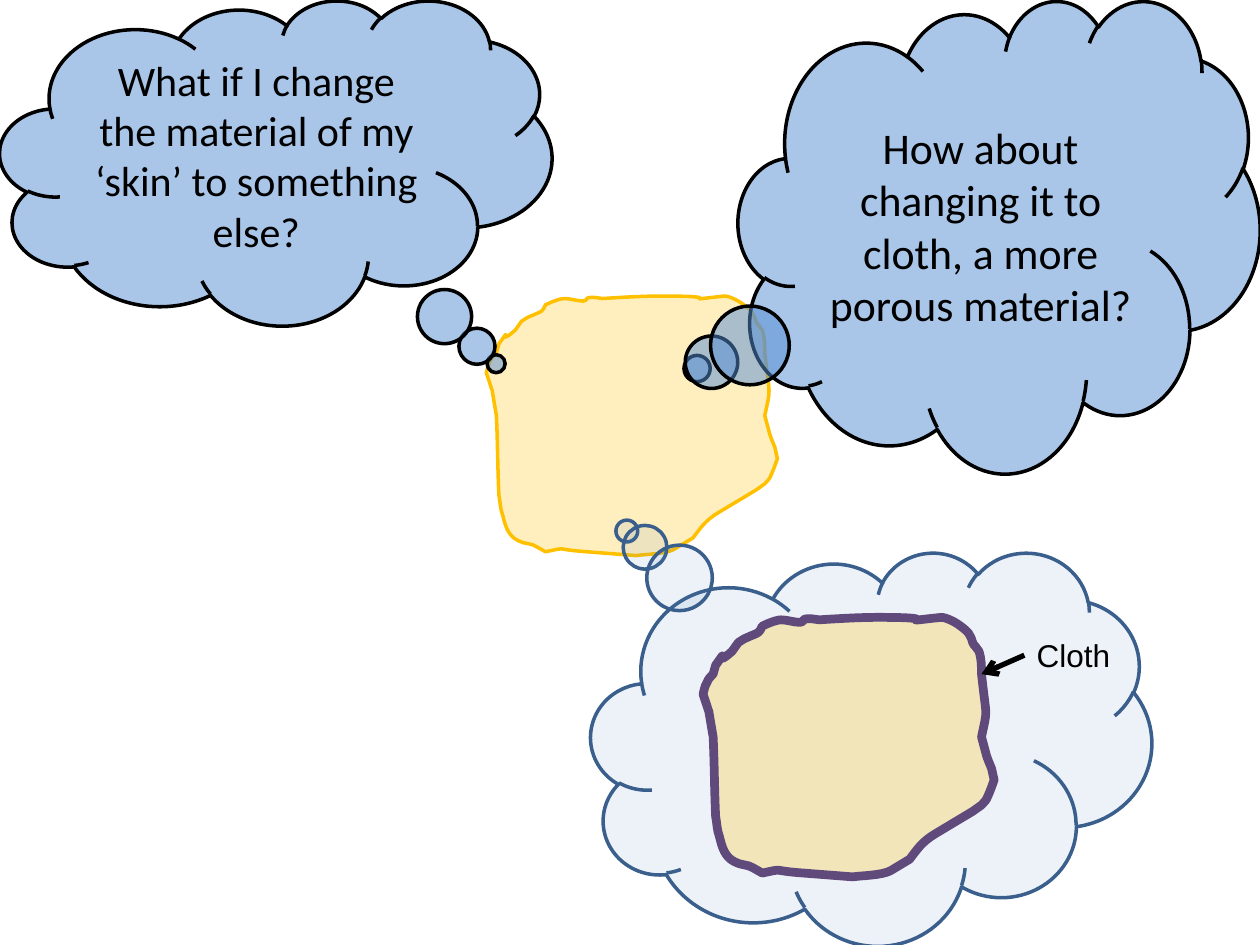
from dataclasses import dataclass

from lxml.etree import SubElement
from pptx import Presentation
from pptx.dml.color import RGBColor
from pptx.enum.shapes import MSO_CONNECTOR, MSO_SHAPE
from pptx.enum.text import MSO_ANCHOR, MSO_AUTO_SIZE, PP_ALIGN
from pptx.oxml.ns import qn
from pptx.shapes.autoshape import Shape
from pptx.shapes.shapetree import _BaseGroupShapes as Shapes
from pptx.text.text import TextFrame
from pptx.util import Inches, Pt

COLORS = {
    "ink": "000000",
    "thought": "558ED5",
    "result": "4F81BD",
    "result_edge": "3A5F8C",
    "skin": "FFC000",
    "cloth": "604A7B",
}


@dataclass(frozen=True)
class Look:
    fill: str
    opacity: int
    edge: str
    width: float


@dataclass(frozen=True)
class Thought:
    box: tuple[float, float, float, float]
    pointer: tuple[float, float]
    look: Look
    text: str = ""
    size: int = 24


@dataclass(frozen=True)
class Skin:
    shift: tuple[float, float]
    look: Look


SKIN_START = (4.63, 2.39)
SKIN_OUTLINE = [
    (4.58, 2.39, 4.53, 2.37, 4.48, 2.37),
    (4.43, 2.37, 4.33, 2.42, 4.33, 2.42),
    (4.32, 2.44, 4.31, 2.47, 4.28, 2.48),
    (4.26, 2.5, 4.23, 2.49, 4.21, 2.51),
    (4.18, 2.52, 4.16, 2.54, 4.14, 2.55),
    (4.12, 2.57, 4.11, 2.6, 4.09, 2.62),
    (3.92, 2.77, 4.09, 2.55, 3.96, 2.73),
    (3.95, 2.75, 3.95, 2.78, 3.94, 2.8),
    (3.92, 2.82, 3.9, 2.84, 3.89, 2.87),
    (3.87, 2.9, 3.87, 2.93, 3.86, 2.96),
    (3.87, 2.99, 3.88, 3.02, 3.89, 3.05),
    (3.89, 3.07, 3.91, 3.09, 3.91, 3.12),
    (3.92, 3.18, 3.93, 3.24, 3.94, 3.3),
    (3.95, 3.51, 3.95, 3.72, 3.96, 3.93),
    (3.97, 3.98, 3.97, 4.04, 3.99, 4.09),
    (4.01, 4.17, 4.03, 4.25, 4.11, 4.29),
    (4.16, 4.32, 4.22, 4.31, 4.26, 4.34),
    (4.33, 4.38),
    (4.52, 4.34, 4.38, 4.36, 4.66, 4.38),
    (4.79, 4.39, 4.92, 4.4, 5.05, 4.41),
    (5.1, 4.4, 5.28, 4.4, 5.35, 4.36),
    (5.4, 4.33, 5.5, 4.27, 5.5, 4.27),
    (5.56, 4.19, 5.6, 4.13, 5.7, 4.07),
    (5.85, 3.98),
    (6, 3.89),
    (6.07, 3.84),
    (6.09, 3.82, 6.11, 3.8, 6.12, 3.77),
    (6.14, 3.73, 6.17, 3.64, 6.17, 3.64),
    (6.16, 3.61, 6.16, 3.58, 6.15, 3.55),
    (6.13, 3.5, 6.11, 3.46, 6.1, 3.41),
    (6.07, 3.3),
    (6.12, 3.06, 6.11, 3.17, 6.07, 2.8),
    (6.07, 2.74, 6.07, 2.68, 6.05, 2.62),
    (6.04, 2.59, 6.01, 2.58, 6, 2.55),
    (5.99, 2.53, 5.99, 2.5, 5.97, 2.48),
    (5.95, 2.45, 5.87, 2.39, 5.82, 2.37),
    (5.8, 2.36, 5.77, 2.35, 5.75, 2.35),
    (5.29, 2.4, 5.86, 2.35, 5.25, 2.35),
    (5.1, 2.35, 4.94, 2.36, 4.78, 2.37),
    (4.61, 2.34, 4.68, 2.39, 4.63, 2.39),
]

THOUGHT_LOOK = Look("thought", 50, "ink", 2)
QUESTION = Thought((0, 0, 4.38, 2.58), (0.399, 0.619), THOUGHT_LOOK,
                   "What if I change the material of my ‘skin’ to something else?")
IDEA = Thought((5.86, 0, 4.14, 3.75), (-0.579, 0.28), THOUGHT_LOOK,
               "How about changing it to cloth, a more porous material?", 25)
RESULT = Thought((4.69, 4.38, 4.45, 3.12), (-0.436, -0.553),
                 Look("result", 10, "result_edge", 2))
PLAIN_SKIN = Skin((0, 0), Look("skin", 25, "skin", 2))
CLOTH_SKIN = Skin((1.72, 2.55), Look("skin", 25, "cloth", 5))


def color(name: str) -> RGBColor:
    return RGBColor.from_string(COLORS[name])


def apply_look(shape: Shape, look: Look) -> None:
    shape.shadow.inherit = False
    shape.fill.solid()
    shape.fill.fore_color.rgb = color(look.fill)
    tint = shape.fill._xPr.find(f"{qn('a:solidFill')}/{qn('a:srgbClr')}")
    SubElement(tint, qn("a:alpha"), val=str(look.opacity * 1000))
    shape.line.color.rgb = color(look.edge)
    shape.line.width = Pt(look.width)


def write(frame: TextFrame, text: str, font: str, size: int, align: PP_ALIGN) -> None:
    frame.word_wrap = True
    paragraph = frame.paragraphs[0]
    paragraph.text = text
    paragraph.alignment = align
    paragraph.font.name = font
    paragraph.font.size = Pt(size)
    paragraph.font.color.rgb = color("ink")


def bend_edges(shape: Shape, shift: tuple[float, float]) -> None:
    edges = list(shape._element.spPr.iter(qn("a:lnTo")))
    for edge, piece in zip(edges, SKIN_OUTLINE):
        if len(piece) == 2:
            continue
        edge.tag = qn("a:cubicBezTo")
        for index in (0, 1):
            x, y = piece[2 * index:2 * index + 2]
            control = SubElement(edge, qn("a:pt"),
                                 x=str(Inches(x + shift[0]) - shape.left),
                                 y=str(Inches(y + shift[1]) - shape.top))
            edge.insert(index, control)


def draw_skin(shapes: Shapes, skin: Skin) -> None:
    dx, dy = skin.shift
    corners = [SKIN_START, *(piece[-2:] for piece in SKIN_OUTLINE)]
    first, *rest = [(Inches(x + dx), Inches(y + dy)) for x, y in corners]
    builder = shapes.build_freeform(*first)
    builder.add_line_segments(rest, close=True)
    outline = builder.convert_to_shape()
    bend_edges(outline, skin.shift)
    apply_look(outline, skin.look)


def draw_thought(shapes: Shapes, thought: Thought) -> None:
    cloud = shapes.add_shape(MSO_SHAPE.CLOUD_CALLOUT, *map(Inches, thought.box))
    cloud.adjustments[0], cloud.adjustments[1] = thought.pointer
    apply_look(cloud, thought.look)
    if thought.text:
        cloud.text_frame.vertical_anchor = MSO_ANCHOR.MIDDLE
        write(cloud.text_frame, thought.text, "Calibri", thought.size, PP_ALIGN.CENTER)


def draw_cloth_label(shapes: Shapes) -> None:
    label = shapes.add_textbox(Inches(8.13), Inches(5), Inches(0.86), Inches(0.4))
    write(label.text_frame, "Cloth", "Arial", 18, PP_ALIGN.LEFT)
    label.text_frame.auto_size = MSO_AUTO_SIZE.SHAPE_TO_FIT_TEXT
    arrow = shapes.add_connector(MSO_CONNECTOR.STRAIGHT, Inches(8.13), Inches(5.2),
                                 Inches(7.79), Inches(5.35))
    arrow.line.color.rgb = color("ink")
    arrow.line.width = Pt(3)
    SubElement(arrow.line._get_or_add_ln(), qn("a:tailEnd"), type="arrow")
    SubElement(arrow._element.spPr, qn("a:effectLst"))


def main() -> None:
    deck = Presentation()
    deck.slide_width, deck.slide_height = Inches(10), Inches(7.5)
    shapes = deck.slides.add_slide(deck.slide_layouts[6]).shapes
    draw_skin(shapes, PLAIN_SKIN)
    draw_thought(shapes, QUESTION)
    draw_thought(shapes, IDEA)
    outcome = shapes.add_group_shape().shapes
    draw_thought(outcome, RESULT)
    draw_skin(outcome, CLOTH_SKIN)
    draw_cloth_label(outcome)
    deck.save("out.pptx")


if __name__ == "__main__":
    main()
